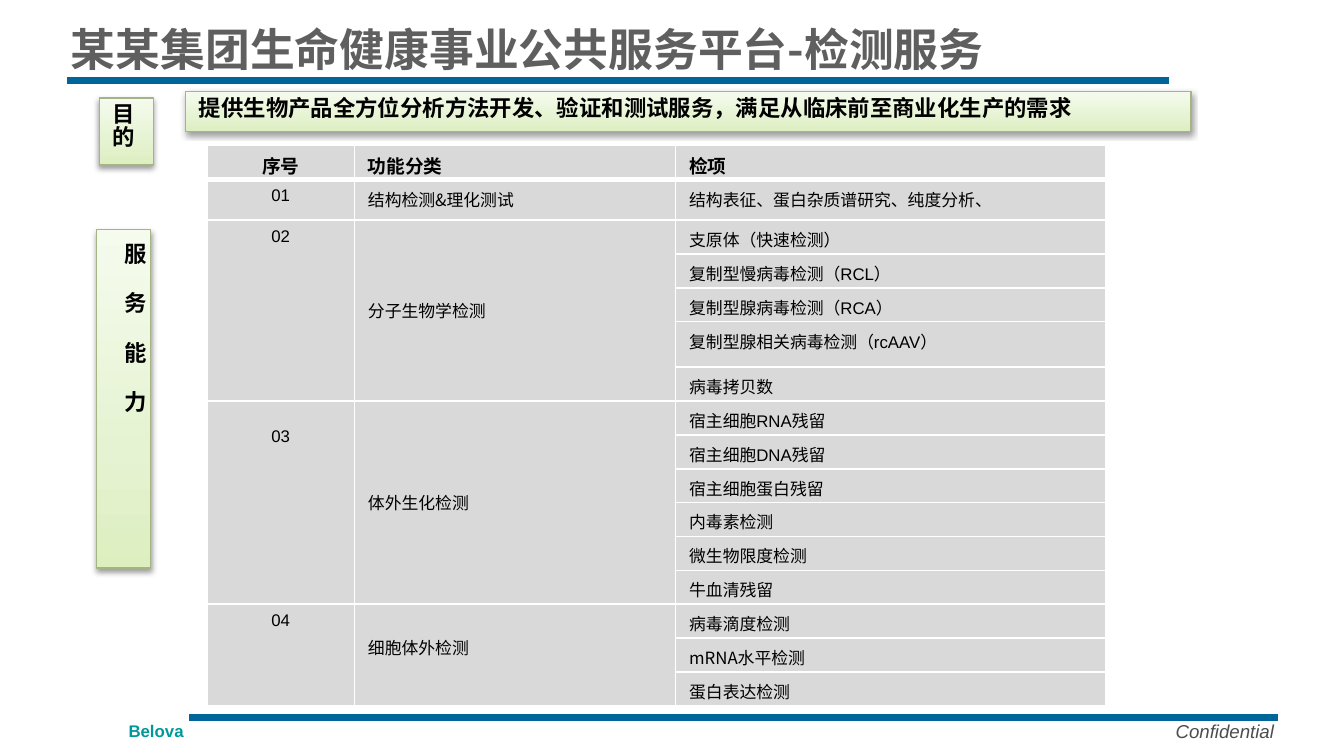
from typing import NamedTuple

from lxml import etree
from pptx import Presentation
from pptx import util as u
from pptx.dml.color import RGBColor
from pptx.enum import shapes, text
from pptx.oxml import ns, parse_xml

CJK, LATIN = "Noto Sans CJK SC", "Arial"
BLACK, WHITE, GREY, BLUE = "000000", "FFFFFF", "D9D9D9", "006699"
GREEN_STOPS = ((0, "DDEEBF"), (35, "E6F3D2"), (100, "F5FBED"))


class Area(NamedTuple):
    """Left, top, width and height in centimetres."""
    left: float
    top: float
    width: float
    height: float

    def lengths(self) -> list:
        return [u.Cm(value) for value in self]


class Style(NamedTuple):
    size: float
    font: str = CJK
    color: str = BLACK
    bold: bool = False
    italic: bool = False


class Label(NamedTuple):
    area: Area
    wording: str
    style: Style
    middle: bool = False


class Panel(NamedTuple):
    area: Area
    wording: str
    vertical: bool = False


class Group(NamedTuple):
    number: str
    category: str
    items: tuple
    number_top: float = 0.13
    category_top: float = 0.0
    category_middle: bool = True


class Rule(NamedTuple):
    start: float
    end: float
    y: float


RULES = (Rule(3.58, 24.16, 13.56), Rule(1.27, 22.1, 1.52))
LABELS = (
    Label(Area(2.18, 13.49, 2.39, 0.64), "Belova", Style(9, LATIN, "009999", bold=True)),
    Label(Area(21.97, 13.49, 3.1, 0.69), "Confidential", Style(10, LATIN, "4D4D4D", italic=True)),
    Label(Area(1.09, 0.25, 20.8, 1.35), "某某集团生命健康事业公共服务平台-检测服务",
          Style(24, CJK, "5F5F5F", bold=True), middle=True),
)
PANELS = (
    Panel(Area(3.51, 1.73, 19, 0.76), "提供生物产品全方位分析方法开发、验证和测试服务，满足从临床前至商业化生产的需求"),
    Panel(Area(1.88, 1.85, 1.02, 1.27), "目的"),
    Panel(Area(1.83, 4.34, 1.02, 6.4), "服务能力", vertical=True),
)
HEADINGS = ("序号", "功能分类", "检项")
GROUPS = (
    Group("01", "结构检测&理化测试", (("结构表征、蛋白杂质谱研究、纯度分析、", CJK),), 0.13, 0.13, False),
    Group("02", "分子生物学检测", (
        ("支原体（快速检测）", LATIN), ("复制型慢病毒检测（RCL）", LATIN),
        ("复制型腺病毒检测（RCA）", LATIN), ("复制型腺相关病毒检测（rcAAV）", LATIN),
        ("病毒拷贝数", LATIN))),
    Group("03", "体外生化检测", (
        ("宿主细胞RNA残留", LATIN), ("宿主细胞DNA残留", LATIN), ("宿主细胞蛋白残留", CJK),
        ("内毒素检测", CJK), ("微生物限度检测", CJK), ("牛血清残留", CJK)), number_top=0.49),
    Group("04", "细胞体外检测", (
        ("病毒滴度检测", CJK), ("mRNA水平检测", CJK), ("蛋白表达检测", CJK)),
        category_top=0.58, category_middle=False),
)
TABLE_AREA = Area(3.91, 2.74, 16.99, 10.58)
COLUMNS = (2.79, 6.07, 8.13)
ROW_HEIGHT = 0.64
SPECIAL_ROWS = {0: 0.66, 1: 0.76, 5: 0.86}


def rgb(value: str) -> RGBColor:
    return RGBColor.from_string(value)


def add_span(para, wording: str, style: Style):
    span = para.add_run()
    span.text = wording
    font = span.font
    font.size, font.name = u.Pt(style.size), style.font
    font.bold, font.italic = style.bold, style.italic
    font.color.rgb = rgb(style.color)
    east_asian = etree.SubElement(font._element, ns.qn("a:ea"))
    east_asian.set("typeface", CJK)
    return span


def draw_rule(page, rule: Rule) -> None:
    line = page.shapes.add_connector(
        shapes.MSO_CONNECTOR.STRAIGHT,
        u.Cm(rule.start), u.Cm(rule.y), u.Cm(rule.end), u.Cm(rule.y))
    line.line.color.rgb = rgb(BLUE)
    line.line.width = u.Pt(3.5)
    etree.SubElement(line._element.spPr, ns.qn("a:effectLst"))


def draw_label(page, label: Label) -> None:
    frame = page.shapes.add_textbox(*label.area.lengths()).text_frame
    frame.word_wrap = True
    if label.middle:
        frame.vertical_anchor = text.MSO_ANCHOR.MIDDLE
    add_span(frame.paragraphs[0], label.wording, label.style)


def draw_panel(page, panel: Panel) -> None:
    box = page.shapes.add_shape(shapes.MSO_SHAPE.RECTANGLE, *panel.area.lengths())
    box.line.color.rgb = rgb("A4B485")
    box.line.width = u.Pt(0.75)

    # Three-stop gradient and soft shadow
    stops = "".join(f'<a:gs pos="{place * 1000}"><a:srgbClr val="{color}"/></a:gs>'
                    for place, color in GREEN_STOPS)
    properties = box._element.spPr
    properties.insert(2, parse_xml(
        f'<a:gradFill {ns.nsdecls("a")} rotWithShape="1"><a:gsLst>{stops}</a:gsLst>'
        '<a:lin ang="16200000" scaled="0"/></a:gradFill>'))
    properties.append(parse_xml(
        f'<a:effectLst {ns.nsdecls("a")}><a:outerShdw blurRad="{u.Pt(3.1)}" dist="{u.Pt(1.6)}" '
        f'dir="5400000" rotWithShape="0"><a:srgbClr val="{BLACK}"><a:alpha val="38000"/>'
        '</a:srgbClr></a:outerShdw></a:effectLst>'))

    frame = box.text_frame
    frame.word_wrap = True
    frame.vertical_anchor = text.MSO_ANCHOR.TOP
    para = frame.paragraphs[0]
    para.alignment = text.PP_ALIGN.LEFT
    para.line_spacing = 0.84
    span = add_span(para, panel.wording, Style(12, bold=True))
    if panel.vertical:
        frame._txBody.bodyPr.set("vert", "eaVert")
        span.font._element.set("spc", "1450")


def style_cell(cell, row: int) -> None:
    properties = cell._tc.get_or_add_tcPr()
    for side in "LRTB":
        heavy = (row, side) in ((0, "B"), (1, "T"))
        properties.append(parse_xml(
            f'<a:ln{side} {ns.nsdecls("a")} w="{u.Pt(3 if heavy else 1)}"><a:solidFill>'
            f'<a:srgbClr val="{WHITE}"/></a:solidFill></a:ln{side}>'))
    cell.fill.solid()
    cell.fill.fore_color.rgb = rgb(GREY)
    cell.margin_top, cell.margin_bottom = u.Cm(0.13), 0


def write_cell(cell, wording: str, style: Style, centred: bool = False,
               top: float = 0.13, middle: bool = False) -> None:
    cell.margin_top = u.Cm(top)
    cell.vertical_anchor = text.MSO_ANCHOR.MIDDLE if middle else text.MSO_ANCHOR.TOP
    para = cell.text_frame.paragraphs[0]
    para.alignment = text.PP_ALIGN.CENTER if centred else text.PP_ALIGN.LEFT
    add_span(para, wording, style)


def draw_table(page) -> None:
    row_count = 1 + sum(len(group.items) for group in GROUPS)
    table = page.shapes.add_table(row_count, len(COLUMNS), *TABLE_AREA.lengths()).table
    for column, width in zip(table.columns, COLUMNS):
        column.width = u.Cm(width)
    for index, row in enumerate(table.rows):
        row.height = u.Cm(SPECIAL_ROWS.get(index, ROW_HEIGHT))
        for cell in row.cells:
            style_cell(cell, index)

    for column, heading in enumerate(HEADINGS):
        write_cell(table.cell(0, column), heading, Style(10, bold=True), centred=column == 0)

    first = 1
    for group in GROUPS:
        last = first + len(group.items) - 1
        if last > first:
            for column in (0, 1):
                table.cell(first, column).merge(table.cell(last, column))
        write_cell(table.cell(first, 0), group.number, Style(9, LATIN), True, group.number_top)
        write_cell(table.cell(first, 1), group.category, Style(9),
                   top=group.category_top, middle=group.category_middle)
        for row, (item, font) in enumerate(group.items, first):
            write_cell(table.cell(row, 2), item, Style(9, font))
        first = last + 1


def main() -> None:
    deck = Presentation()
    deck.slide_width, deck.slide_height = u.Cm(25.4), u.Cm(14.29)
    page = deck.slides.add_slide(deck.slide_layouts[6])
    for rule in RULES:
        draw_rule(page, rule)
    draw_table(page)
    for label in LABELS:
        draw_label(page, label)
    for panel in PANELS:
        draw_panel(page, panel)
    deck.save("out.pptx")


if __name__ == "__main__":
    main()
